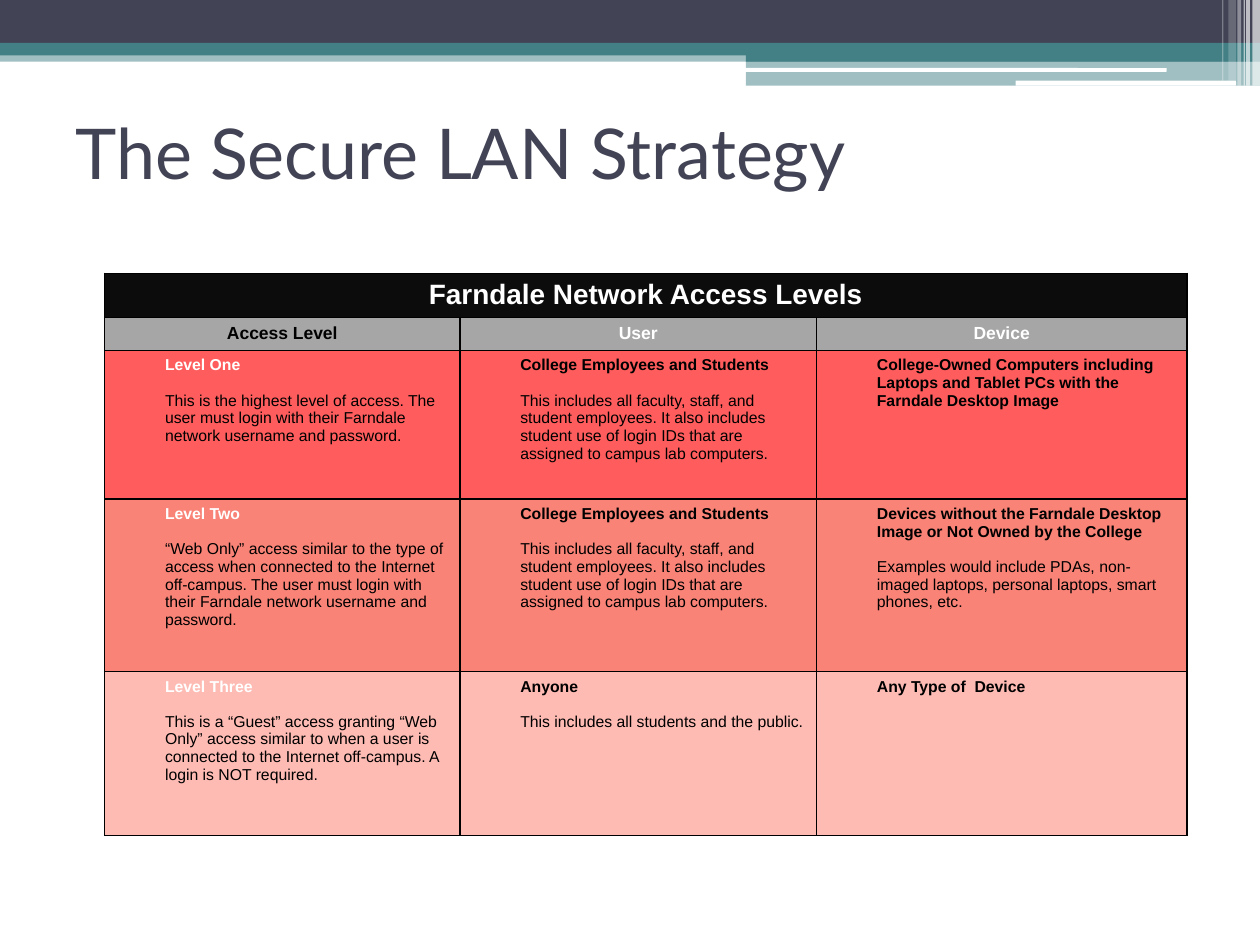
from lxml.etree import SubElement
from pptx import Presentation
from pptx.dml.color import RGBColor
from pptx.enum.shapes import MSO_SHAPE
from pptx.enum.text import MSO_ANCHOR, PP_ALIGN
from pptx.oxml.ns import qn
from pptx.util import Inches, Pt

NAVY = RGBColor(0x42, 0x44, 0x56)
TEAL = RGBColor(0x43, 0x80, 0x86)
WHITE = RGBColor(0xFF, 0xFF, 0xFF)
BLACK = RGBColor(0x00, 0x00, 0x00)
NEAR_BLACK = RGBColor(0x0C, 0x0C, 0x0C)
GRAY = RGBColor(0xA6, 0xA6, 0xA6)
RED = RGBColor(0xFF, 0x5D, 0x5D)
SALMON = RGBColor(0xF9, 0x83, 0x77)
PINK = RGBColor(0xFE, 0xBB, 0xB4)

TITLE = "The Secure LAN Strategy"
TABLE_TITLE = "Farndale Network Access Levels"
HEADINGS = ["Access Level", "User", "Device"]
EMPLOYEES = (
    "College Employees and Students",
    "This includes all faculty, staff, and student employees. It also includes "
    "student use of login IDs that are assigned to campus lab computers.",
)
# Row colour, then a (heading, description) pair for each column
LEVELS = [
    (RED, [
        ("Level One",
         "This is the highest level of access. The user must login with their "
         "Farndale network username and password."),
        EMPLOYEES,
        ("College-Owned Computers including Laptops and Tablet PCs with the "
         "Farndale Desktop Image", ""),
    ]),
    (SALMON, [
        ("Level Two",
         "“Web Only” access similar to the type of access when connected to the "
         "Internet off-campus. The user must login with their Farndale network "
         "username and password."),
        EMPLOYEES,
        ("Devices without the Farndale Desktop Image or Not Owned by the College",
         "Examples would include PDAs, non-imaged laptops, personal laptops, "
         "smart phones, etc."),
    ]),
    (PINK, [
        ("Level Three",
         "This is a “Guest” access granting “Web Only” access similar to when a "
         "user is connected to the Internet off-campus. A login is NOT required."),
        ("Anyone", "This includes all students and the public."),
        ("Any Type of  Device", ""),
    ]),
]
COLUMN_WIDTHS = [2.82, 2.83, 2.94]
ROW_HEIGHTS = [0.35, 0.26, 1.18, 1.37, 1.3]

# left, top, width, height, colour, opacity in percent
BANDS = [
    (0, 0.4, 10, 0.09, TEAL, 50),
    (0, 0, 10, 0.34, NAVY, 100),
    (0, 0.34, 10, 0.1, TEAL, 100),
    (5.92, 0.39, 4.08, 0.1, TEAL, 100),
    (5.92, 0.48, 4.08, 0.2, TEAL, 50),
]
HIGHLIGHTS = [
    (5.91, 0.54, 3.35, 0.03, WHITE, 100),
    (8.06, 0.64, 1.75, 0.04, WHITE, 100),
]
STRIPES = [
    (9.94, 0, 0.06, 0.68, WHITE, 65),
    (9.89, 0, 0.03, 0.68, WHITE, 65),
    (9.87, 0, 0.01, 0.68, WHITE, 60),
    (9.82, 0, 0.03, 0.68, WHITE, 40),
    (9.75, 0, 0.06, 0.64, WHITE, 20),
    (9.7, 0, 0.01, 0.64, WHITE, 30),
]


def add_bar(page, preset, left, top, width, height, color, opacity):
    bar = page.shapes.add_shape(
        preset, Inches(left), Inches(top), Inches(width), Inches(height))
    bar.shadow.inherit = False
    bar.line.fill.background()
    bar.fill.solid()
    bar.fill.fore_color.rgb = color
    if opacity < 100:
        color_element = bar.fill._xPr.find(qn("a:solidFill"))[0]
        SubElement(color_element, qn("a:alpha"), val=str(opacity * 1000))


def write(para, text, size=9, color=BLACK, bold=False, font="Arial",
          align=PP_ALIGN.LEFT, space_before=0, indent=None, first_line=0):
    para.alignment = align
    para.space_before = Pt(space_before)
    if indent is not None:
        properties = para._p.get_or_add_pPr()
        properties.set("marL", str(Inches(indent)))
        properties.set("indent", str(Inches(first_line)))
    span = para.add_run()
    span.text = text
    span.font.name = font
    span.font.size = Pt(size)
    span.font.bold = bold
    span.font.color.rgb = color


def style_cell(cell, color):
    """Give the cell a solid fill and thin black borders."""
    properties = cell._tc.get_or_add_tcPr()
    for side in ("lnL", "lnR", "lnT", "lnB"):
        border = SubElement(properties, qn(f"a:{side}"), w=str(Pt(1)))
        fill = SubElement(border, qn("a:solidFill"))
        SubElement(fill, qn("a:srgbClr"), val=str(BLACK))
    cell.fill.solid()
    cell.fill.fore_color.rgb = color


def add_access_table(page):
    frame = page.shapes.add_table(
        len(ROW_HEIGHTS), len(COLUMN_WIDTHS), Inches(0.83), Inches(2.17),
        Inches(sum(COLUMN_WIDTHS)), Inches(sum(ROW_HEIGHTS)))
    table = frame.table
    for column, width in zip(table.columns, COLUMN_WIDTHS):
        column.width = Inches(width)
    row_colors = [NEAR_BLACK, GRAY] + [color for color, _ in LEVELS]
    for row, height, color in zip(table.rows, ROW_HEIGHTS, row_colors):
        row.height = Inches(height)
        for cell in row.cells:
            style_cell(cell, color)

    centered = dict(bold=True, align=PP_ALIGN.CENTER, indent=0.38, first_line=-0.38)
    table.cell(0, 0).merge(table.cell(0, len(COLUMN_WIDTHS) - 1))
    write(table.cell(0, 0).text_frame.paragraphs[0], TABLE_TITLE,
          size=16, color=WHITE, **centered)
    for column, heading in enumerate(HEADINGS):
        write(table.cell(1, column).text_frame.paragraphs[0], heading, size=10,
              color=WHITE if column else BLACK, **centered)

    for row, (_, entries) in enumerate(LEVELS, start=2):
        for column, (heading, description) in enumerate(entries):
            text_frame = table.cell(row, column).text_frame
            write(text_frame.paragraphs[0], heading, bold=True, indent=0.38,
                  color=BLACK if column else WHITE)
            if description:
                write(text_frame.add_paragraph(), description,
                      indent=0.38, space_before=10)


def main():
    deck = Presentation()
    deck.slide_width, deck.slide_height = Inches(10), Inches(7.5)
    page = deck.slides.add_slide(deck.slide_layouts[5])

    for preset, bars in ((MSO_SHAPE.RECTANGLE, BANDS),
                         (MSO_SHAPE.ROUNDED_RECTANGLE, HIGHLIGHTS),
                         (MSO_SHAPE.RECTANGLE, STRIPES)):
        for bar in bars:
            add_bar(page, preset, *bar)

    title = page.shapes.title
    title.left, title.top = Inches(0.5), Inches(0.58)
    title.width, title.height = Inches(9), Inches(1.25)
    title.text_frame.vertical_anchor = MSO_ANCHOR.MIDDLE
    write(title.text_frame.paragraphs[0], TITLE, size=40, color=NAVY, font="Lato")

    add_access_table(page)
    deck.save("out.pptx")


if __name__ == "__main__":
    main()
